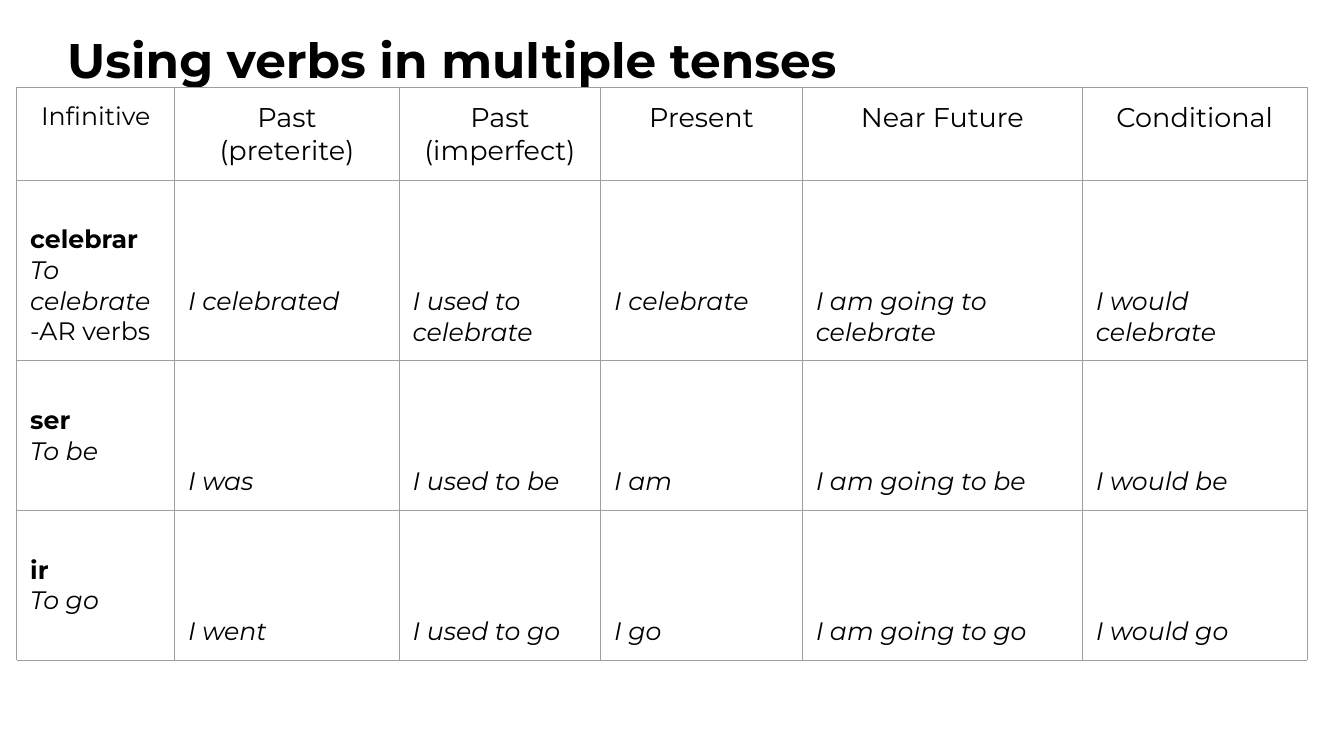
from lxml.etree import SubElement
from pptx import Presentation
from pptx.dml.color import RGBColor as RGB
from pptx.enum.text import MSO_ANCHOR, MSO_AUTO_SIZE, PP_ALIGN
from pptx.oxml.ns import qn
from pptx.util import Inches, Pt

TITLE = "Using verbs in multiple tenses"
HEADERS = ["Infinitive", "Past (preterite)", "Past (imperfect)",
           "Present", "Near Future", "Conditional"]
# verb, meaning, ending note, then one phrase per tense
VERBS = [
    ("celebrar", "To celebrate", "-AR verbs",
     ["I celebrated", "I used to celebrate", "I celebrate",
      "I am going to celebrate", "I would celebrate"]),
    ("ser", "To be", "",
     ["I was", "I used to be", "I am", "I am going to be", "I would be"]),
    ("ir", "To go", "",
     ["I went", "I used to go", "I go", "I am going to go", "I would go"]),
]
COL_WIDTHS = [2.35, 3.34, 3, 3, 4.17, 3.34]
ROW_HEIGHTS = [1.36, 2.67, 2.22, 2.22]

THEME = {
    "font": "Montserrat", "text": RGB(0, 0, 0), "fill": RGB(255, 255, 255),
    "border": "9E9E9E", "border_width": Pt(0.75),
    "title": 52, "header": 29, "body": 27,
}
INSET = 0.2
LINE = 0.457  # height of one body line
VERB_TOP = INSET + LINE
PHRASE_TOP = INSET + 3 * LINE  # leaves room to write above the phrase


def add_run(p, text, size, bold=False, italic=False):
    r = p.add_run()
    r.text = text
    formats = {"name": THEME["font"], "size": Pt(size), "bold": bold, "italic": italic}
    for name, value in formats.items():
        setattr(r.font, name, value)
    r.font.color.rgb = THEME["text"]


def add_borders(cell):
    tc_pr = cell._tc.get_or_add_tcPr()
    for side in ("a:lnL", "a:lnR", "a:lnT", "a:lnB"):
        ln = SubElement(tc_pr, qn(side), w=str(THEME["border_width"]))
        fill = SubElement(ln, qn("a:solidFill"))
        SubElement(fill, qn("a:srgbClr"), val=THEME["border"])


def fill_cell(cell, lines, top=INSET, align=PP_ALIGN.LEFT):
    """Style a cell and write (text, size, bold, italic) lines into it."""
    add_borders(cell)
    cell.fill.solid()
    cell.fill.fore_color.rgb = THEME["fill"]
    margins = {"left": INSET, "right": INSET, "top": top, "bottom": INSET}
    for side, value in margins.items():
        setattr(cell, f"margin_{side}", Inches(value))
    cell.vertical_anchor = MSO_ANCHOR.TOP
    tf = cell.text_frame
    for i, line in enumerate(lines):
        p = tf.add_paragraph() if i else tf.paragraphs[0]
        p.alignment = align
        add_run(p, *line)


def add_title(s):
    sp = s.shapes.title
    sp.left, sp.top, sp.width, sp.height = map(Inches, (1, 0.31, 17.99, 1.78))
    tf = sp.text_frame
    for side in ("left", "right", "top", "bottom"):
        setattr(tf, f"margin_{side}", 0)
    tf.word_wrap = True
    tf.auto_size = MSO_AUTO_SIZE.NONE
    tf.vertical_anchor = MSO_ANCHOR.TOP
    p = tf.paragraphs[0]
    p.alignment = PP_ALIGN.LEFT
    p.line_spacing = 1.15
    add_run(p, TITLE, THEME["title"], bold=True)


def add_verb_table(s):
    table = s.shapes.add_table(
        len(ROW_HEIGHTS), len(COL_WIDTHS), Inches(0.25), Inches(1.3),
        Inches(sum(COL_WIDTHS)), Inches(sum(ROW_HEIGHTS))).table
    table.first_row = table.horz_banding = False
    for col, width in zip(table.columns, COL_WIDTHS):
        col.width = Inches(width)
    for row, height in zip(table.rows, ROW_HEIGHTS):
        row.height = Inches(height)

    body = THEME["body"]
    for c, text in enumerate(HEADERS):
        size = THEME["header"] if c else body
        fill_cell(table.cell(0, c), [(text, size)], align=PP_ALIGN.CENTER)
    for r, (verb, meaning, ending, phrases) in enumerate(VERBS, 1):
        lines = [(verb, body, True), (meaning, body, False, True)]
        if ending:
            lines.append((ending, body))
        fill_cell(table.cell(r, 0), lines, VERB_TOP)
        for c, phrase in enumerate(phrases, 1):
            fill_cell(table.cell(r, c), [(phrase, body, False, True)], PHRASE_TOP)


def main():
    prs = Presentation()
    prs.slide_width, prs.slide_height = Inches(20), Inches(11.25)
    s = prs.slides.add_slide(prs.slide_layouts[5])
    add_title(s)
    add_verb_table(s)
    prs.save("out.pptx")


if __name__ == "__main__":
    main()
